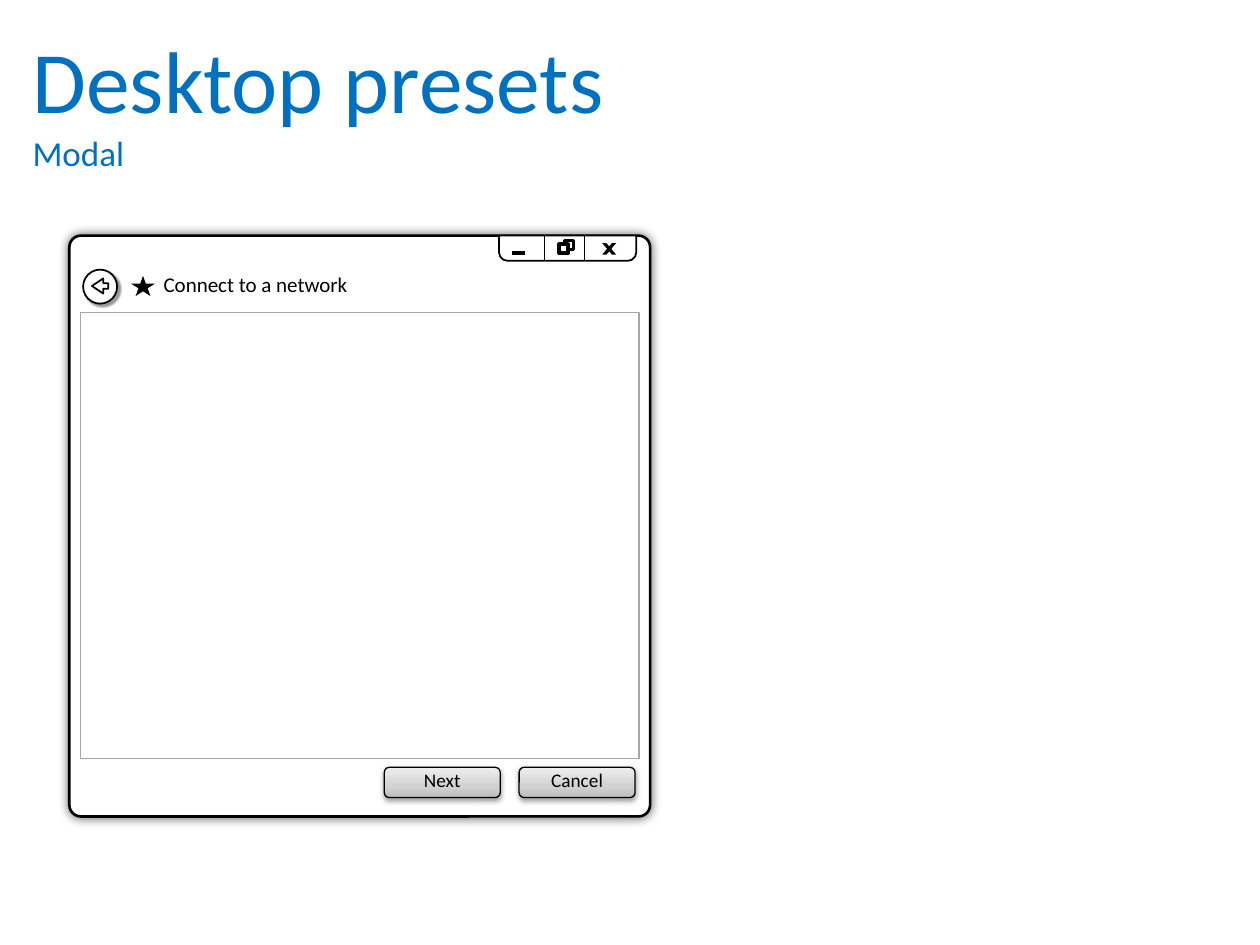
from lxml import etree
from pptx import Presentation
from pptx.dml.color import RGBColor
from pptx.enum.shapes import MSO_CONNECTOR, MSO_SHAPE
from pptx.enum.text import MSO_ANCHOR, MSO_AUTO_SIZE, PP_ALIGN
from pptx.oxml.ns import qn
from pptx.util import Inches, Pt

BLACK = RGBColor(0x00, 0x00, 0x00)
WHITE = RGBColor(0xFF, 0xFF, 0xFF)
GREY = RGBColor(0xA6, 0xA6, 0xA6)
BLUE = RGBColor(0x00, 0x70, 0xC0)
BUTTON_STOPS = [(0, "BDBDBD"), (35, "D1D1D1"), (100, "EEEEEE")]
FONT = "Calibri"

HEADING = [("Desktop presets", 50), ("Modal", 20)]
CAPTION = "Connect to a network"
BUTTONS = ["Next", "Cancel"]

DIALOG_LEFT, DIALOG_TOP, DIALOG_SIZE = 0.55, 1.87, 4.61
CONTROL_HEIGHT = 0.2
DIVIDERS = [4.32, 4.64]
RESTORE_SQUARES = [(4.48, 1.91, 1.5), (4.44, 1.94, 2.25)]
BUTTON_LEFT, BUTTON_TOP, BUTTON_STEP = 3.05, 6.09, 1.07
BUTTON_WIDTH, BUTTON_HEIGHT = 0.92, 0.24

# Opacity in percent, blur and distance in points, direction in degrees
DIALOG_SHADOW = (60, 6, 0, 0)
BACK_SHADOW = (40, 1, 2, 45)
BUTTON_SHADOW = (38, 3.1, 1.6, 90)


def add_shadow(shape, opacity, blur, distance, direction):
    effects = shape._element.spPr.find(qn("a:effectLst"))
    outer = etree.SubElement(
        effects, qn("a:outerShdw"), blurRad=str(Pt(blur)), dist=str(Pt(distance)),
        dir=str(direction * 60000), algn="ctr", rotWithShape="0")
    color = etree.SubElement(outer, qn("a:srgbClr"), val=str(BLACK))
    etree.SubElement(color, qn("a:alpha"), val=str(opacity * 1000))


def add_figure(parent, kind, place, fill=WHITE, line=BLACK, weight=None,
               adjust=(), shadow=None):
    """Add a preset shape; without a weight it has no outline."""
    shape = parent.shapes.add_shape(kind, *map(Inches, place))
    shape.shadow.inherit = False
    shape.fill.solid()
    shape.fill.fore_color.rgb = fill
    if weight:
        shape.line.color.rgb = line
        shape.line.width = Pt(weight)
    else:
        shape.line.fill.background()
    for index, value in enumerate(adjust):
        shape.adjustments[index] = value
    if shadow:
        add_shadow(shape, *shadow)
    return shape


def add_line(parent, start, end, weight):
    line = parent.shapes.add_connector(
        MSO_CONNECTOR.STRAIGHT, *map(Inches, start + end))
    line.line.color.rgb = BLACK
    line.line.width = Pt(weight)
    etree.SubElement(line._element.spPr, qn("a:effectLst"))


def write_text(frame, lines, color):
    frame.text = "\n".join(text for text, size in lines)
    for para, (text, size) in zip(frame.paragraphs, lines):
        font = para.runs[0].font
        font.name, font.size, font.color.rgb = FONT, Pt(size), color


def add_text(parent, place, lines, color):
    frame = parent.shapes.add_textbox(*map(Inches, place)).text_frame
    frame.word_wrap = True
    frame.auto_size = MSO_AUTO_SIZE.SHAPE_TO_FIT_TEXT
    write_text(frame, lines, color)


def add_dialog_controls(slide):
    group = slide.shapes.add_group_shape()
    bottom = DIALOG_TOP + CONTROL_HEIGHT
    strip = add_figure(group, MSO_SHAPE.ROUND_2_SAME_RECTANGLE,
                       (3.96, DIALOG_TOP, 1.09, CONTROL_HEIGHT),
                       weight=1, adjust=(0.344, 0))
    strip.rotation = 180
    for x in DIVIDERS:
        add_line(group, (x, bottom), (x, DIALOG_TOP), 0.75)
    for x, y, weight in RESTORE_SQUARES:
        add_figure(group, MSO_SHAPE.RECTANGLE, (x, y, 0.07, 0.07), weight=weight)
    for flipped in (False, True):
        stroke = add_figure(group, MSO_SHAPE.PARALLELOGRAM,
                            (4.78, 1.93, 0.11, 0.09), fill=BLACK, adjust=(0.851,))
        if flipped:
            stroke._element.spPr.find(qn("a:xfrm")).set("flipH", "1")
    add_line(group, (4.06, 2.01), (4.17, 2.01), 2.25)


def add_caption(slide):
    group = slide.shapes.add_group_shape()
    add_figure(group, MSO_SHAPE.STAR_5_POINT, (1.04, 2.19, 0.19, 0.16), fill=BLACK)
    add_text(group, (1.2, 2.11, 3.74, 0.3), [(CAPTION, 12)], BLACK)


def add_back_button(slide):
    group = slide.shapes.add_group_shape()
    add_figure(group, MSO_SHAPE.OVAL, (0.66, 2.14, 0.27, 0.27),
               weight=1, shadow=BACK_SHADOW)
    add_figure(group, MSO_SHAPE.LEFT_ARROW, (0.73, 2.21, 0.13, 0.12),
               weight=1, adjust=(0.354, 0.749))


def add_button(slide, label, left):
    button = add_figure(slide, MSO_SHAPE.ROUNDED_RECTANGLE,
                        (left, BUTTON_TOP, BUTTON_WIDTH, BUTTON_HEIGHT),
                        weight=0.75, shadow=BUTTON_SHADOW)
    button.fill.gradient()
    button.fill.gradient_angle = 90
    stops = button._element.spPr.find(qn("a:gradFill")).find(qn("a:gsLst"))
    for stop in list(stops):
        stops.remove(stop)
    for position, color in BUTTON_STOPS:
        stop = etree.SubElement(stops, qn("a:gs"), pos=str(position * 1000))
        etree.SubElement(stop, qn("a:srgbClr"), val=color)
    frame = button.text_frame
    frame.margin_top, frame.margin_bottom = 0, Inches(0.04)
    frame.vertical_anchor = MSO_ANCHOR.MIDDLE
    write_text(frame, [(label, 11)], BLACK)
    frame.paragraphs[0].alignment = PP_ALIGN.CENTER


def main():
    deck = Presentation()
    deck.slide_width, deck.slide_height = Inches(10), Inches(7.5)
    slide = deck.slides.add_slide(deck.slide_layouts[6])

    add_figure(slide, MSO_SHAPE.ROUNDED_RECTANGLE,
               (DIALOG_LEFT, DIALOG_TOP, DIALOG_SIZE, DIALOG_SIZE),
               weight=1.5, adjust=(0.02,), shadow=DIALOG_SHADOW)
    add_dialog_controls(slide)
    add_caption(slide)
    add_figure(slide, MSO_SHAPE.RECTANGLE, (0.64, 2.48, 4.43, 3.54),
               line=GREY, weight=1)
    add_back_button(slide)
    add_text(slide, (0.16, 0.16, 9.69, 1.28), HEADING, BLUE)
    for index, label in enumerate(BUTTONS):
        add_button(slide, label, BUTTON_LEFT + index * BUTTON_STEP)

    deck.save("out.pptx")


if __name__ == "__main__":
    main()
